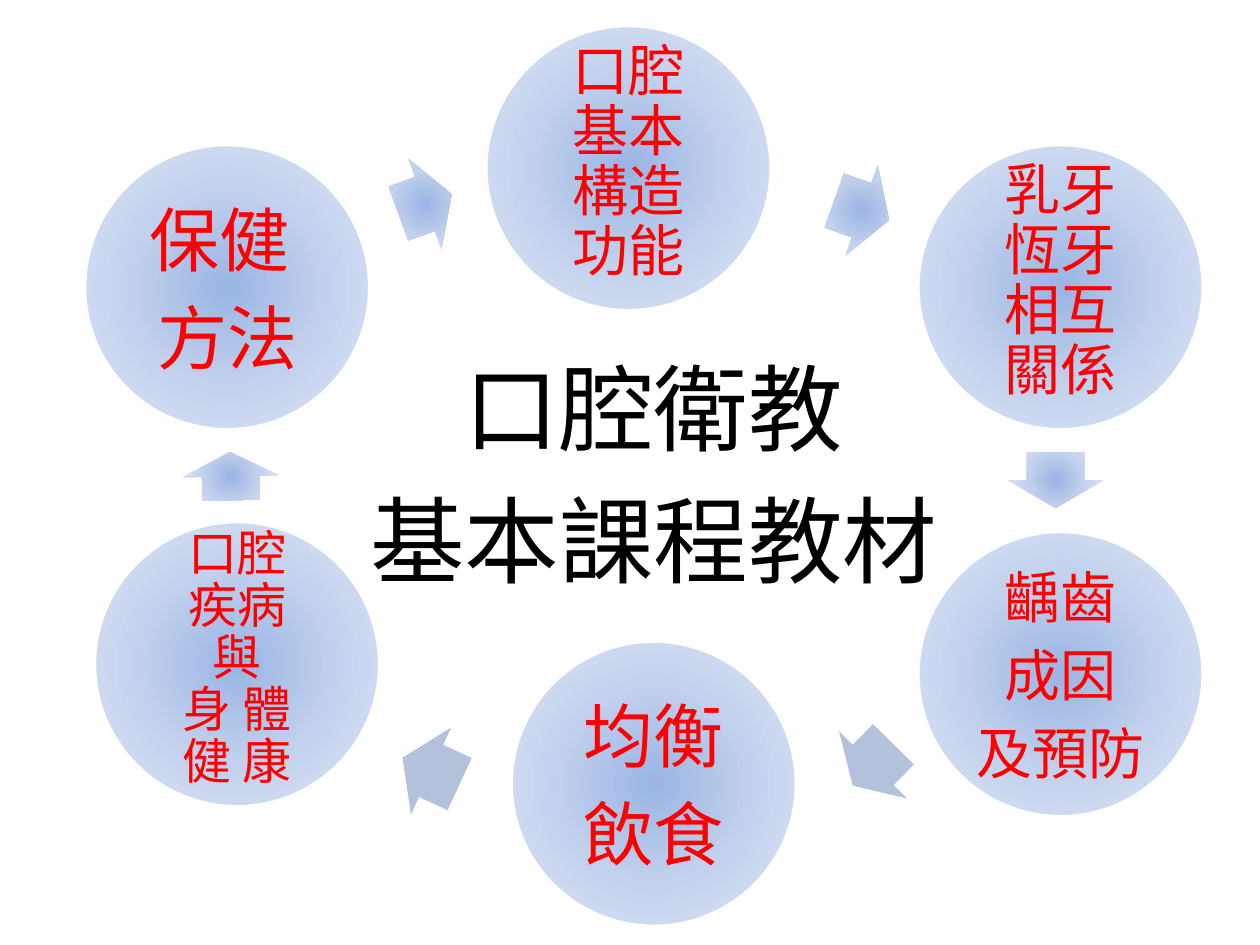
import pptx
import pptx.util
import pptx.dml.color
import pptx.enum.shapes
import pptx.enum.text
import pptx.oxml
import pptx.oxml.ns
import lxml.etree

Cm, Pt = pptx.util.Cm, pptx.util.Pt
SHAPE = pptx.enum.shapes.MSO_SHAPE
ANCHOR = pptx.enum.text.MSO_ANCHOR

COLORS = {"core": "9AB5E4", "middle": "C2D1ED", "rim": "E1E8F5",
          "flat": "B3C1DB", "outline": "FFFFFF", "topic": "FF0000", "title": "000000"}
SERIF, SANS = "Times New Roman", "Noto Sans CJK SC"
DIAMETER = 5.75
ARROW_BREADTH = 1.93

# Content: centre x, centre y (cm), size (pt), line pitch (pt), font, lines
TOPICS = [
    (12.67, 3.39, 32, 28, SERIF, ["口腔", "基本", "構造", "功能"]),
    (21.38, 5.79, 32, 28, SERIF, ["乳牙", "恆牙", "相互", "關係"]),
    (21.38, 13.59, 32, 38.4, SERIF, ["齲齒", "成因", "及預防"]),
    (13.18, 15.8, 40, 48, SERIF, ["均衡", "飲食"]),
    (4.78, 13.39, 28, 24, SERIF, ["口腔", "疾病", "與", "身 體", "健 康"]),
    (4.58, 5.79, 40, 48, SANS, ["保健 ", "方法"]),
]
# Arrows: centre x, centre y, length (cm), direction (degrees), fill
ARROWS = [
    (17.37, 4.24, 1.17, 19.6, "radial"),
    (21.28, 9.68, 1.12, 90, "radial"),
    (17.6, 15.42, 1.17, 134.6, "flat"),
    (8.69, 15.54, 1.27, 204.8, "flat"),
    (4.65, 9.6, 0.97, 268.7, "radial"),
    (8.57, 4.11, 1.14, 339.9, "radial"),
]
TITLE = ["口腔衛教", "基本課程教材"]


def rgb(name):
    return pptx.dml.color.RGBColor.from_string(COLORS[name])


def fill_radial(sp):
    """Fill a shape with a gradient that spreads from its centre."""
    stops = "".join(
        f'<a:gs pos="{pos}"><a:srgbClr val="{COLORS[name]}"/></a:gs>'
        for pos, name in [(0, "core"), (50000, "middle"), (100000, "rim")])
    grad = pptx.oxml.parse_xml(
        f'<a:gradFill {pptx.oxml.ns.nsdecls("a")} rotWithShape="1"><a:gsLst>{stops}</a:gsLst>'
        '<a:path path="circle"><a:fillToRect l="50000" t="50000" r="50000" b="50000"/></a:path>'
        '</a:gradFill>')
    sp.fill.background()
    props = sp.fill._xPr
    props.replace(props.find(pptx.oxml.ns.qn("a:noFill")), grad)


def add_centred(slide, kind, x, y, w, h):
    sp = slide.shapes.add_shape(kind, Cm(x - w / 2), Cm(y - h / 2), Cm(w), Cm(h))
    sp.shadow.inherit = False
    return sp


def write_lines(tf, lines, size, pitch, font, color):
    for i, line in enumerate(lines):
        p = tf.paragraphs[0] if i == 0 else tf.add_paragraph()
        p.alignment = pptx.enum.text.PP_ALIGN.CENTER
        p.line_spacing = Pt(pitch)
        p.space_before = Pt(size * 0.2)
        r = p.add_run()
        r.text = line
        r.font.size = Pt(size)
        r.font.name = font
        r.font.color.rgb = rgb(color)
        ea = lxml.etree.SubElement(r.font._element, pptx.oxml.ns.qn("a:ea"))
        ea.set("typeface", SANS)


def main():
    prs = pptx.Presentation()
    prs.slide_width, prs.slide_height = Cm(25.4), Cm(19.05)
    slide = prs.slides.add_slide(prs.slide_layouts[6])

    # Topic circles
    for x, y, size, pitch, font, lines in TOPICS:
        sp = add_centred(slide, SHAPE.OVAL, x, y, DIAMETER, DIAMETER)
        fill_radial(sp)
        sp.line.color.rgb = rgb("outline")
        sp.line.width = Pt(2)
        tf = sp.text_frame
        tf.word_wrap = True
        tf.vertical_anchor = ANCHOR.MIDDLE
        tf.margin_left = tf.margin_right = tf.margin_top = tf.margin_bottom = Cm(0.14)
        write_lines(tf, lines, size, pitch, font, "topic")

    # Arrows around the cycle
    for x, y, length, angle, fill in ARROWS:
        sp = add_centred(slide, SHAPE.RIGHT_ARROW, x, y, length, ARROW_BREADTH)
        sp.adjustments[0], sp.adjustments[1] = 0.6, 0.5
        sp.rotation = angle
        sp.line.fill.background()
        if fill == "radial":
            fill_radial(sp)
        else:
            sp.fill.solid()
            sp.fill.fore_color.rgb = rgb(fill)

    # Central title
    box = slide.shapes.add_textbox(Cm(6.83), Cm(6.93), Cm(12.7), Cm(5.33))
    tf = box.text_frame
    tf.word_wrap = True
    tf.auto_size = pptx.enum.text.MSO_AUTO_SIZE.SHAPE_TO_FIT_TEXT
    write_lines(tf, TITLE, 54, 64.8, SANS, "title")

    prs.save("out.pptx")


if __name__ == "__main__":
    main()
